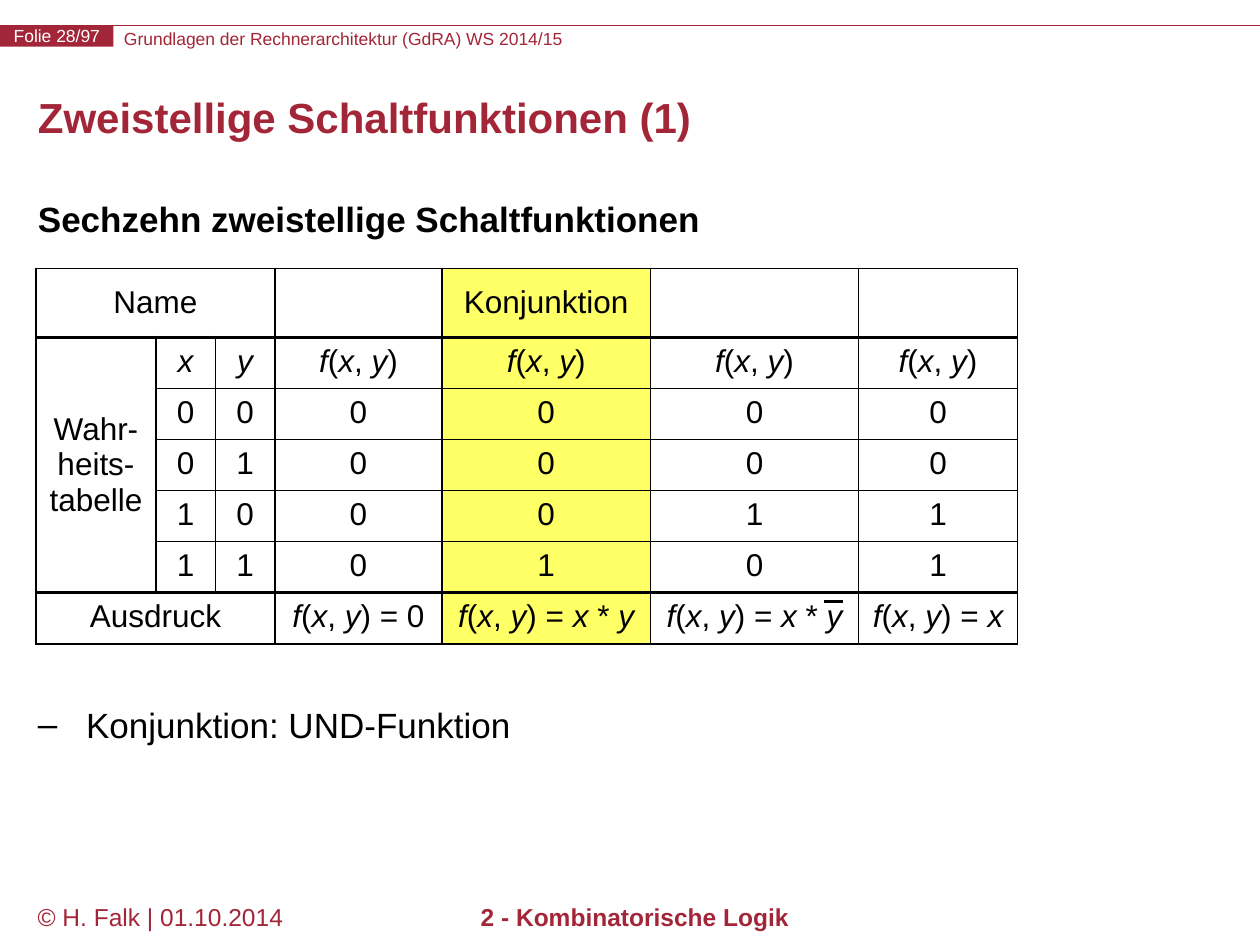
from dataclasses import dataclass
from itertools import groupby

from lxml.etree import SubElement
from pptx import Presentation
from pptx.dml.color import RGBColor
from pptx.enum.shapes import MSO_CONNECTOR as Connector, MSO_SHAPE as Shape
from pptx.enum.text import MSO_ANCHOR as Anchor, MSO_AUTO_SIZE as AutoSize, PP_ALIGN as Align
from pptx.oxml.ns import qn
from pptx.util import Cm, Pt


@dataclass(frozen=True)
class Theme:
    font: str = "Arial"
    accent: str = "A32638"
    ink: str = "000000"
    paper: str = "FFFFFF"
    highlight: str = "FFFF66"
    title: int = 24
    body: int = 20
    table: int = 18
    footer: int = 14
    header: int = 10
    thin: float = 1
    thick: float = 2.25


@dataclass(frozen=True)
class Area:
    left: float
    top: float
    width: float
    height: float

    def lengths(self) -> tuple:
        return Cm(self.left), Cm(self.top), Cm(self.width), Cm(self.height)


@dataclass(frozen=True)
class Label:
    text: str
    area: Area
    size: int
    bold: bool = False
    align: Align = Align.LEFT
    inset: bool = True


@dataclass(frozen=True)
class Rule:
    left: float
    right: float
    height: float
    color: str
    weight: float


THEME = Theme()
VARIABLES = "fxy"

LABELS = [
    Label("Grundlagen der Rechnerarchitektur (GdRA) WS 2014/15",
          Area(2.5, 0.56, 16.76, 0.43), THEME.header, inset=False),
    Label("© H. Falk | 01.10.2014", Area(0.51, 18.06, 5.59, 0.99), THEME.footer),
    Label("2 - Kombinatorische Logik", Area(5.1, 18.06, 15.4, 0.99), THEME.footer,
          bold=True, align=Align.CENTER),
]

COLUMNS = [2.41, 1.2, 1.2, 3.37, 4.2, 4.2, 3.2]
ROWS = [1.39] + [1.03] * 6
HIGHLIGHT_COLUMN = 4
THICK_LINES = (1, 6)
MERGES = [((0, 0), (0, 2)), ((1, 0), (5, 0)), ((6, 0), (6, 2))]
CELLS = [
    ["Name", "", "", "", "Konjunktion", "", ""],
    ["Wahr-heits-tabelle", "x", "y"] + ["f(x, y)"] * 4,
    ["", "0", "0", "0", "0", "0", "0"],
    ["", "0", "1", "0", "0", "0", "0"],
    ["", "1", "0", "0", "0", "1", "1"],
    ["", "1", "1", "0", "1", "0", "1"],
    ["Ausdruck", "", "", "f(x, y) = 0", "f(x, y) = x * y", "f(x, y) = x * y", "f(x, y) = x"],
]


def add_span(para, text: str, size: int, color: str, bold=False, italic=False) -> None:
    span = para.add_run()
    span.text = text
    font = span.font
    font.name = THEME.font
    font.size = Pt(size)
    font.bold = bold
    font.italic = italic
    font.color.rgb = RGBColor.from_string(color)


def clear_insets(frame) -> None:
    frame.margin_left = frame.margin_right = frame.margin_top = frame.margin_bottom = 0


def place(box, area: Area) -> None:
    box.left, box.top, box.width, box.height = area.lengths()


def add_label(page, label: Label) -> None:
    frame = page.shapes.add_textbox(*label.area.lengths()).text_frame
    frame.word_wrap = True
    if not label.inset:
        clear_insets(frame)
    para = frame.paragraphs[0]
    para.alignment = label.align
    add_span(para, label.text, label.size, THEME.accent, label.bold)


def add_rule(page, rule: Rule) -> None:
    line = page.shapes.add_connector(Connector.STRAIGHT, Cm(rule.left), Cm(rule.height),
                                     Cm(rule.right), Cm(rule.height))
    line.line.color.rgb = RGBColor.from_string(rule.color)
    line.line.width = Pt(rule.weight)
    SubElement(line.element.spPr, qn("a:effectLst"))


def add_page_number(page, text: str) -> None:
    box = page.shapes.add_shape(Shape.RECTANGLE, *Area(0, 0.51, 2.29, 0.43).lengths())
    box.shadow.inherit = False
    box.fill.solid()
    box.fill.fore_color.rgb = RGBColor.from_string(THEME.accent)
    box.line.fill.background()
    frame = box.text_frame
    frame.word_wrap = False
    frame.vertical_anchor = Anchor.MIDDLE
    clear_insets(frame)
    para = frame.paragraphs[0]
    para.alignment = Align.CENTER
    add_span(para, text, THEME.header, THEME.paper)


def fill_title(box, text: str) -> None:
    place(box, Area(0.51, 1.52, 24.4, 1.83))
    frame = box.text_frame
    frame.auto_size = AutoSize.NONE
    frame.vertical_anchor = Anchor.MIDDLE
    para = frame.paragraphs[0]
    para.alignment = Align.LEFT
    para.line_spacing = Pt(24)
    add_span(para, text, THEME.title, THEME.accent, bold=True)


def set_bullet(para, indent: float, mark: str = "") -> None:
    props = para._p.get_or_add_pPr()
    props.set("marL", str(Cm(indent)))
    props.set("indent", str(-Cm(indent)))
    if mark:
        SubElement(props, qn("a:buChar"), char=mark)
    else:
        SubElement(props, qn("a:buNone"))


def fill_body(box, heading: str, item: str) -> None:
    place(box, Area(0.51, 3.86, 24.4, 13.87))
    frame = box.text_frame
    frame.auto_size = AutoSize.NONE
    frame.vertical_anchor = Anchor.TOP
    first = frame.paragraphs[0]
    set_bullet(first, 0)
    first.space_before = Pt(0)
    add_span(first, heading, THEME.body, THEME.ink, bold=True)
    second = frame.add_paragraph()
    set_bullet(second, 0.97, "–")
    second.line_spacing = 1.2
    second.space_before = Pt(260)
    add_span(second, item, THEME.body, THEME.ink)


def set_borders(cell, row: int) -> None:
    props = cell._tc.get_or_add_tcPr()
    lines = {"a:lnL": None, "a:lnR": None, "a:lnT": row, "a:lnB": row + 1}
    for tag, position in lines.items():
        weight = THEME.thick if position in THICK_LINES else THEME.thin
        edge = SubElement(props, qn(tag), w=str(Pt(weight)))
        SubElement(SubElement(edge, qn("a:solidFill")), qn("a:srgbClr"), val=THEME.ink)


def add_truth_table(page) -> None:
    area = Area(0.73, 5.41, sum(COLUMNS), sum(ROWS))
    table = page.shapes.add_table(len(ROWS), len(COLUMNS), *area.lengths()).table
    table.first_row = table.horz_banding = False
    for column, width in zip(table.columns, COLUMNS):
        column.width = Cm(width)
    for line, height in zip(table.rows, ROWS):
        line.height = Cm(height)
    for start, end in MERGES:
        table.cell(*start).merge(table.cell(*end))
    for row, texts in enumerate(CELLS):
        for column, text in enumerate(texts):
            cell = table.cell(row, column)
            set_borders(cell, row)
            cell.fill.solid()
            color = THEME.highlight if column == HIGHLIGHT_COLUMN else THEME.paper
            cell.fill.fore_color.rgb = RGBColor.from_string(color)
            if row == 0 or cell.is_merge_origin and row == 1:
                cell.vertical_anchor = Anchor.MIDDLE
            para = cell.text_frame.paragraphs[0]
            para.alignment = Align.CENTER
            for italic, letters in groupby(text, lambda letter: letter in VARIABLES):
                add_span(para, "".join(letters), THEME.table, THEME.ink, italic=italic)


def main() -> None:
    deck = Presentation()
    deck.slide_width, deck.slide_height = Cm(25.4), Cm(19.05)
    page = deck.slides.add_slide(deck.slide_layouts[1])
    fill_title(page.shapes.title, "Zweistellige Schaltfunktionen (1)")
    fill_body(page.placeholders[1], "Sechzehn zweistellige Schaltfunktionen",
              "Konjunktion: UND-Funktion")
    add_rule(page, Rule(0, 25.4, 0.51, THEME.accent, 0.75))
    add_page_number(page, "Folie 28/97")
    for label in LABELS:
        add_label(page, label)
    add_truth_table(page)
    add_rule(page, Rule(16.61, 16.99, 12.12, THEME.ink, 1.5))
    deck.save("out.pptx")


if __name__ == "__main__":
    main()
